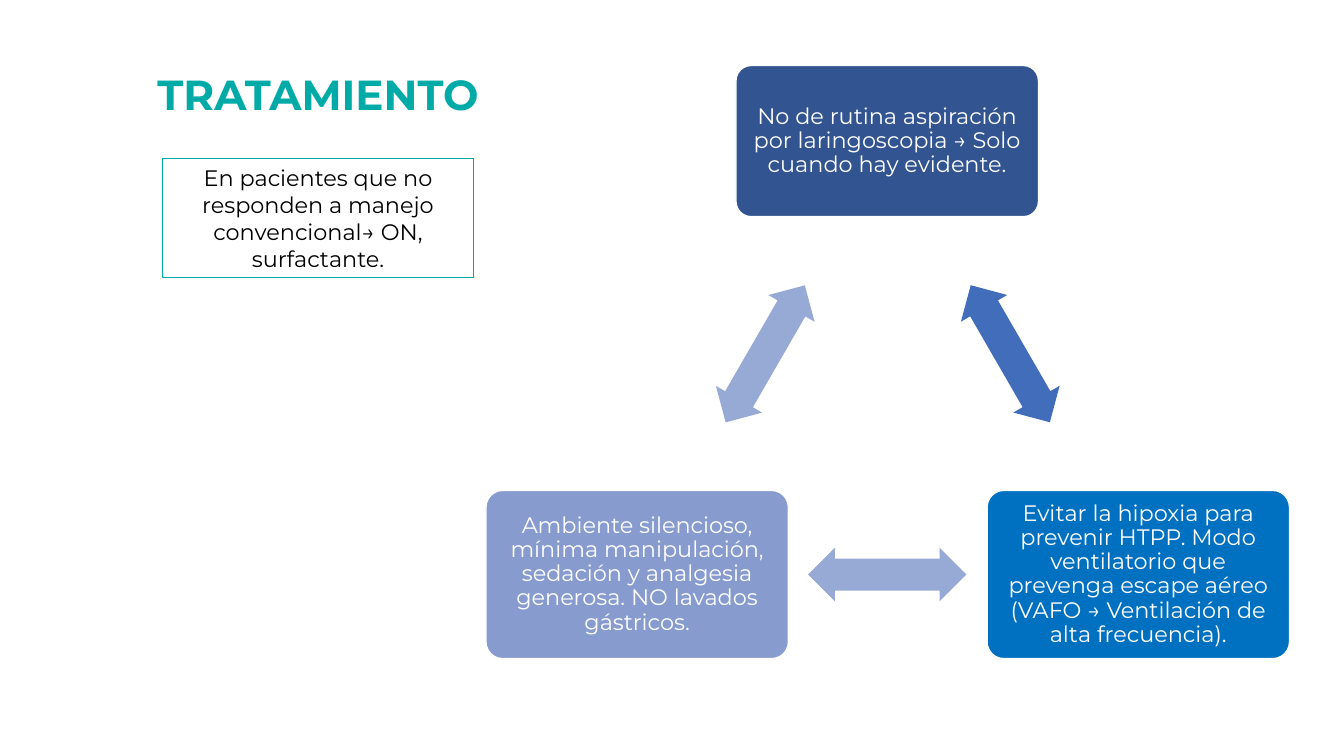
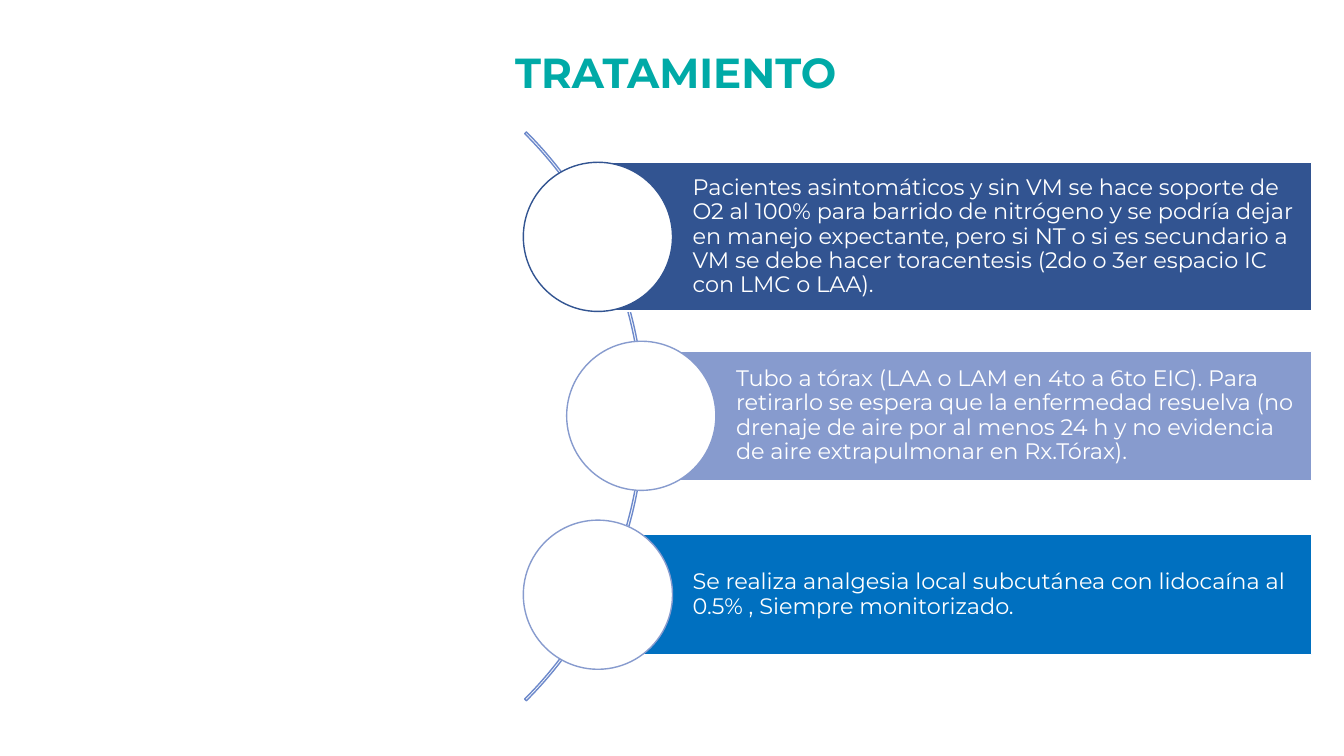
from pptx import Presentation
from pptx.dml.color import RGBColor
from pptx.enum.shapes import MSO_SHAPE
from pptx.enum.text import MSO_ANCHOR, MSO_AUTO_SIZE, PP_ALIGN
from pptx.util import Inches, Pt

FONT = "Montserrat"
COLORS = {
    "teal": "00AAA7",
    "navy": "325491",
    "blue": "0070C0",
    "periwinkle": "879BCE",
    "arrow_dark": "416DBB",
    "arrow_light": "97A9D5",
    "arc": "6D89CB",
    "white": "FFFFFF",
    "black": "000000",
}
CARD_WIDTH = 3
ARROW_WIDTH, ARROW_HEIGHT = 1.57, 0.53
CIRCLE_SIZE = 1.48
BAR_RIGHT = 13.01
FIRST_BAR_MIDDLE, BAR_STEP = 2.35, 1.775

CARDS = [
    (8.8, 1.4, 1.5, "navy",
     "No de rutina aspiración por laringoscopia → Solo cuando hay evidente."),
    (11.29, 5.7, 1.67, "blue",
     "Evitar la hipoxia para prevenir HTPP. Modo ventilatorio que prevenga "
     "escape aéreo (VAFO → Ventilación de alta frecuencia)."),
    (6.32, 5.7, 1.67, "periwinkle",
     "Ambiente silencioso, mínima manipulación, sedación y analgesia generosa. "
     "NO lavados gástricos."),
]
ARROWS = [
    (10.02, 3.51, 60, "arrow_dark"),
    (8.8, 5.7, 180, "arrow_light"),
    (7.59, 3.51, 300, "arrow_light"),
]
BARS = [
    (5.93, 1.47, "navy", "navy",
     "Pacientes asintomáticos y sin VM se hace soporte de O2 al 100% para barrido "
     "de nitrógeno y se podría dejar en manejo expectante, pero si NT o si es "
     "secundario a VM se debe hacer toracentesis (2do o 3er espacio IC con LMC o LAA)."),
    (6.36, 1.28, "periwinkle", "periwinkle",
     "Tubo a tórax (LAA o LAM en 4to a 6to EIC). Para retirarlo se espera que la "
     "enfermedad resuelva (no drenaje de aire por al menos 24 h y no evidencia de "
     "aire extrapulmonar en Rx.Tórax)."),
    (5.93, 1.19, "blue", "periwinkle",
     "Se realiza analgesia local subcutánea con lidocaína al 0.5% , "
     "Siempre monitorizado."),
]


def color(name):
    """Return the named colour."""
    return RGBColor.from_string(COLORS[name])


def add_title_page(deck, left, top, width, align):
    """Add a page with the shared title style."""
    page = deck.slides.add_slide(deck.slide_layouts[5])
    title = page.shapes.title
    title.left, title.top = Inches(left), Inches(top)
    title.width, title.height = Inches(width), Inches(0.61)
    write(title, "TRATAMIENTO", "teal", align, size=30, bold=True,
          anchor=MSO_ANCHOR.TOP)
    return page


def write(shape, text, ink, align, size=16, bold=False, spacing=1.0,
          insets=(0.1, 0.05, 0.1, 0.05), anchor=MSO_ANCHOR.MIDDLE):
    """Set a shape's single paragraph and its frame."""
    frame = shape.text_frame
    frame.text = text
    frame.word_wrap = True
    frame.auto_size = MSO_AUTO_SIZE.NONE
    frame.vertical_anchor = anchor
    (frame.margin_left, frame.margin_top,
     frame.margin_right, frame.margin_bottom) = map(Inches, insets)
    paragraph = frame.paragraphs[0]
    paragraph.alignment = align
    paragraph.line_spacing = spacing
    font = paragraph.font
    font.name, font.size, font.bold = FONT, Pt(size), bold
    font.color.rgb = color(ink)


def add_figure(page, kind, left, top, width, height, fill=None, line=None,
               weight=1, adjustments=()):
    """Add a flat preset shape."""
    figure = page.shapes.add_shape(
        kind, Inches(left), Inches(top), Inches(width), Inches(height))
    figure.shadow.inherit = False
    for index, value in enumerate(adjustments):
        figure.adjustments[index] = value
    if fill:
        figure.fill.solid()
        figure.fill.fore_color.rgb = color(fill)
    else:
        figure.fill.background()
    if line:
        figure.line.color.rgb = color(line)
        figure.line.width = Pt(weight)
    else:
        figure.line.fill.background()
    return figure


def add_card(page, center, middle, height, fill, text):
    """Add a rounded card of the cycle."""
    card = add_figure(page, MSO_SHAPE.ROUNDED_RECTANGLE, center - CARD_WIDTH / 2,
                      middle - height / 2, CARD_WIDTH, height, fill, "white",
                      adjustments=(0.1,))
    write(card, text, "white", PP_ALIGN.CENTER, spacing=0.9, insets=(0.07,) * 4)


def add_arrow(page, center, middle, angle, fill):
    """Add a rotated double arrow between cards."""
    arrow = add_figure(page, MSO_SHAPE.LEFT_RIGHT_ARROW, center - ARROW_WIDTH / 2,
                       middle - ARROW_HEIGHT / 2, ARROW_WIDTH, ARROW_HEIGHT, fill,
                       adjustments=(0.6, 0.5))
    arrow.rotation = angle


def add_bar(page, left, middle, height, fill, ring, text):
    """Add a text bar with a circle centred on its left edge."""
    bar = add_figure(page, MSO_SHAPE.RECTANGLE, left, middle - height / 2,
                     BAR_RIGHT - left, height, fill, "white")
    write(bar, text, "white", PP_ALIGN.LEFT, spacing=0.9,
          insets=(0.94, 0.04, 0.04, 0.04))
    add_figure(page, MSO_SHAPE.OVAL, left - CIRCLE_SIZE / 2,
               middle - CIRCLE_SIZE / 2, CIRCLE_SIZE, CIRCLE_SIZE, "white", ring)


def build_cycle_page(deck):
    """Build the page with the care cycle."""
    page = add_title_page(deck, 0.84, 0.63, 4.63, PP_ALIGN.CENTER)
    for card in CARDS:
        add_card(page, *card)
    for arrow in ARROWS:
        add_arrow(page, *arrow)
    note = add_figure(page, MSO_SHAPE.RECTANGLE, 1.61, 1.57, 3.09, 1.18,
                      line="teal", weight=0.75)
    write(note, "En pacientes que no responden a manejo convencional→ ON, surfactante.",
          "black", PP_ALIGN.CENTER)


def build_steps_page(deck):
    """Build the page with the steps along an arc."""
    page = add_title_page(deck, 5.01, 0.41, 5.25, PP_ALIGN.LEFT)
    add_figure(page, MSO_SHAPE.BLOCK_ARC, -1.59, 0.14, 7.98, 7.98, line="arc",
               adjustments=(189, 27, 0.003))
    for index, (left, *details) in enumerate(BARS):
        add_bar(page, left, FIRST_BAR_MIDDLE + index * BAR_STEP, *details)


def main():
    """Build and save the deck."""
    deck = Presentation()
    deck.slide_width, deck.slide_height = Inches(13.33), Inches(7.5)
    build_cycle_page(deck)
    build_steps_page(deck)
    deck.save("out.pptx")


if __name__ == "__main__":
    main()
